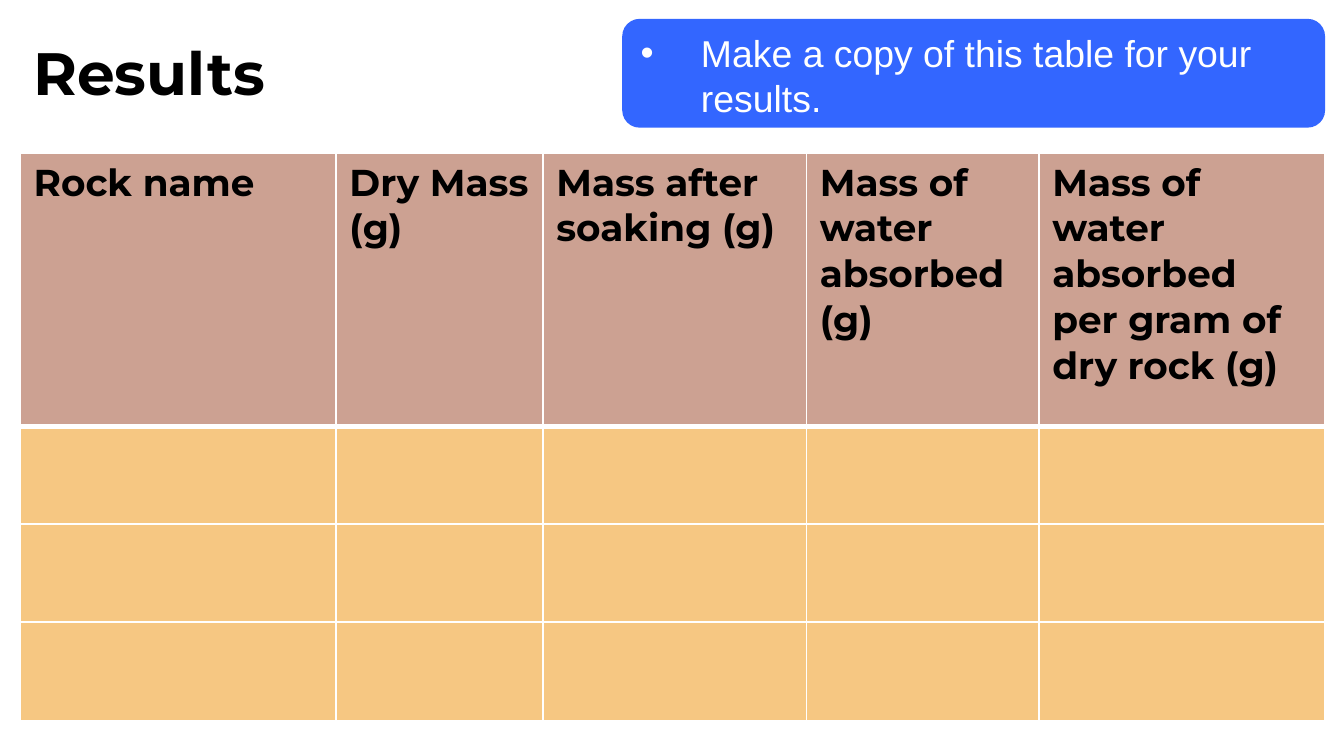
from dataclasses import dataclass

from lxml import etree
from pptx import Presentation
from pptx import util as u
from pptx.dml.color import RGBColor
from pptx.enum import shapes, text
from pptx.oxml import ns

WIDTH = 10
HEIGHT = WIDTH * 9 / 16
MARGIN = 0.15
COLORS = {"ink": "000000", "white": "FFFFFF", "callout": "3366FF",
          "header": "CCA192", "body": "F6C782"}
ENTRY_ROWS = 3
HEADER_HEIGHT, ENTRY_HEIGHT = 2.03, 0.73


@dataclass
class Column:
    width: float
    heading: list[str]


@dataclass
class Style:
    size: int
    font: str
    color: str
    bold: bool = False


TITLE = Style(32, "Montserrat", "ink", True)
HEADING = Style(20, "Montserrat", "ink", True)
INSTRUCTION = Style(20, "Arial", "white")

COLUMNS = [
    Column(2.35, ["Rock name"]),
    Column(1.54, ["Dry Mass (g)"]),
    Column(1.96, ["Mass after soaking (g)"]),
    Column(1.73, ["Mass of water", "absorbed (g)"]),
    Column(2.13, ["Mass of water absorbed", "per gram of dry rock (g)"]),
]


def rgb(name: str) -> RGBColor:
    return RGBColor.from_string(COLORS[name])


def write(frame, lines: list[str], style: Style) -> None:
    for i, line in enumerate(lines):
        paragraph = frame.add_paragraph() if i else frame.paragraphs[0]
        paragraph.alignment = text.PP_ALIGN.LEFT
        run = paragraph.add_run()
        run.text = line
        run.font.size = u.Pt(style.size)
        run.font.name = style.font
        run.font.bold = style.bold
        run.font.color.rgb = rgb(style.color)


def add_bullet(paragraph, indent: float) -> None:
    props = paragraph._p.get_or_add_pPr()
    props.set("marL", str(u.Inches(indent)))
    props.set("indent", str(-u.Inches(indent)))
    etree.SubElement(props, ns.qn("a:buFont"), typeface="Arial")
    etree.SubElement(props, ns.qn("a:buChar"), char="•")


def style_cell(cell, fill: str, top: int, bottom: int) -> None:
    props = cell._tc.get_or_add_tcPr()
    # Borders come before the fill in the cell properties
    for side, points in {"L": 1, "R": 1, "T": top, "B": bottom}.items():
        line = etree.SubElement(props, ns.qn(f"a:ln{side}"), w=str(u.Pt(points)))
        solid = etree.SubElement(line, ns.qn("a:solidFill"))
        etree.SubElement(solid, ns.qn("a:srgbClr"), val=COLORS["white"])
    cell.fill.solid()
    cell.fill.fore_color.rgb = rgb(fill)


def add_title(slide) -> None:
    title = slide.shapes.add_textbox(
        u.Inches(MARGIN), u.Inches(0.22), u.Inches(2.06), u.Inches(0.64))
    title.text_frame.word_wrap = True
    write(title.text_frame, ["Results"], TITLE)


def add_instruction(slide) -> None:
    callout = slide.shapes.add_shape(
        shapes.MSO_SHAPE.ROUNDED_RECTANGLE,
        u.Inches(4.63), u.Inches(0.14), u.Inches(5.23), u.Inches(0.81))
    callout.adjustments[0] = 0.16
    callout.shadow.inherit = False
    callout.fill.solid()
    callout.fill.fore_color.rgb = rgb("callout")
    callout.line.fill.background()
    frame = callout.text_frame
    frame.word_wrap = True
    frame.vertical_anchor = text.MSO_ANCHOR.MIDDLE
    frame.margin_top = u.Inches(0.08)
    write(frame, ["Make a copy of this table for your results."], INSTRUCTION)
    add_bullet(frame.paragraphs[0], 0.45)


def add_results_table(slide) -> None:
    heights = [HEADER_HEIGHT] + [ENTRY_HEIGHT] * ENTRY_ROWS
    table = slide.shapes.add_table(
        len(heights), len(COLUMNS), u.Inches(MARGIN), u.Inches(1.14),
        u.Inches(sum(c.width for c in COLUMNS)), u.Inches(sum(heights))).table
    for r, height in enumerate(heights):
        table.rows[r].height = u.Inches(height)
        for c in range(len(COLUMNS)):
            style_cell(table.cell(r, c), "body" if r else "header",
                       top=3 if r == 1 else 1, bottom=1 if r else 3)
    for c, column in enumerate(COLUMNS):
        table.columns[c].width = u.Inches(column.width)
        write(table.cell(0, c).text_frame, column.heading, HEADING)


def main() -> None:
    deck = Presentation()
    deck.slide_width, deck.slide_height = u.Inches(WIDTH), u.Inches(HEIGHT)
    slide = deck.slides.add_slide(deck.slide_layouts[6])
    add_title(slide)
    add_instruction(slide)
    add_results_table(slide)
    deck.save("out.pptx")


if __name__ == "__main__":
    main()
